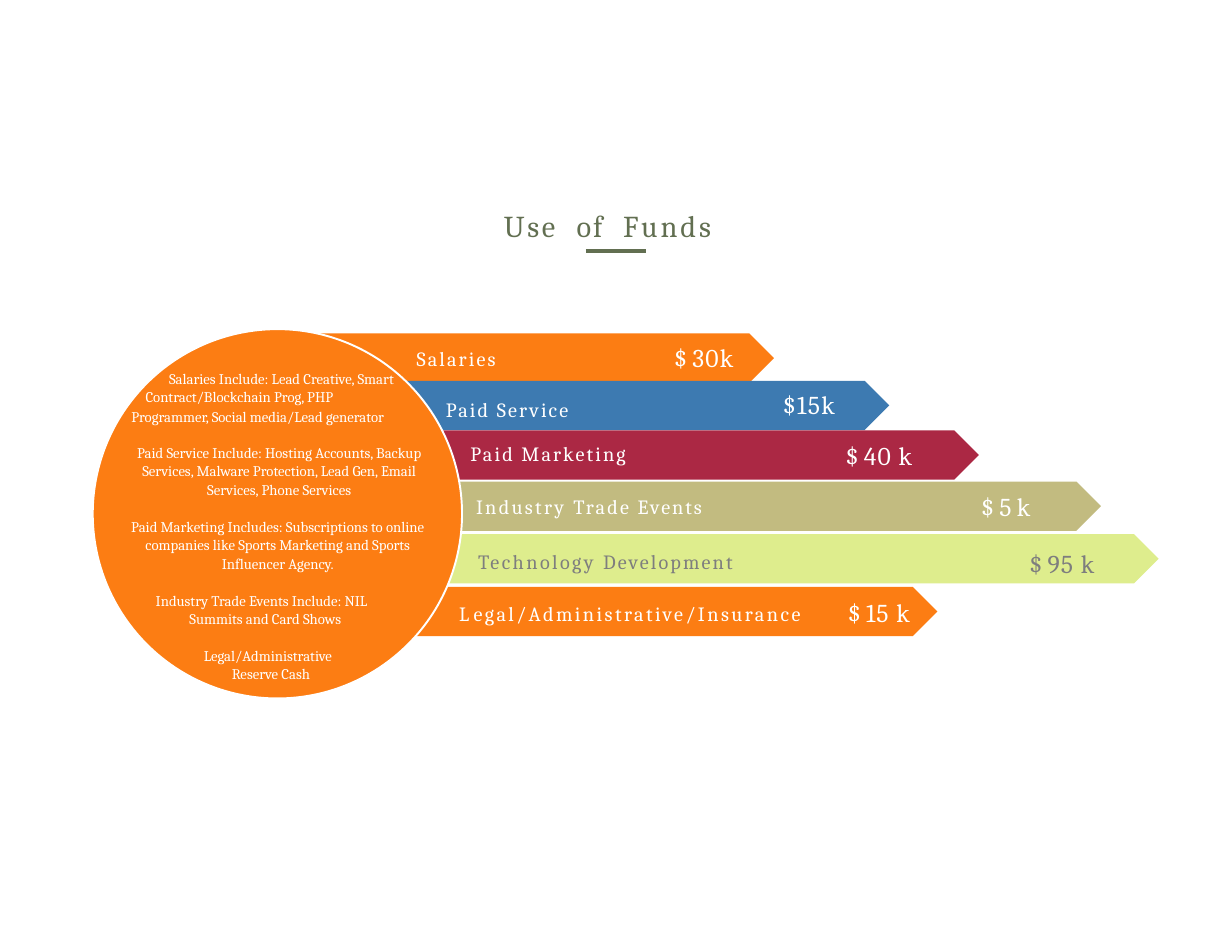
"""Build the Use of Funds slide: arrow bars fanning out from a circle of notes."""
from lxml.etree import SubElement
from pptx import Presentation
from pptx.dml.color import RGBColor
from pptx.enum.shapes import MSO_CONNECTOR, MSO_SHAPE
from pptx.enum.text import PP_ALIGN
from pptx.oxml.ns import qn
from pptx.util import Pt

HUES = {"orange": "FC7D13", "blue": "3D7AB1", "red": "AB2844", "sand": "C2BB80",
        "lime": "DEED8D", "white": "FFFFFF", "gray": "7E7E7E", "olive": "626F51"}


def hue(name):
    return RGBColor.from_string(HUES[name])


def write(parts, left, top, width, height, size=13, color="white", align=PP_ALIGN.LEFT,
          margin=0, indent=0, lines=1.0):
    box = slide.shapes.add_textbox(Pt(left), Pt(top), Pt(width), Pt(height))
    frame = box.text_frame
    frame.word_wrap = True
    frame.margin_left = frame.margin_right = frame.margin_top = frame.margin_bottom = 0
    para = frame.paragraphs[0]
    para.alignment = align
    para.line_spacing = lines
    props = para._p.get_or_add_pPr()
    props.set("marL", str(Pt(margin)))
    props.set("indent", str(Pt(indent)))
    for text, gap in parts:
        run = para.add_run()
        run.text = text
        run.font.name = "Cambria"
        run.font.size = Pt(size)
        run.font.color.rgb = hue(color)
        run._r.get_or_add_rPr().set("spc", str(round(gap * 100)))


deck = Presentation()
deck.slide_width, deck.slide_height = Pt(792), Pt(612)
slide = deck.slides.add_slide(deck.slide_layouts[6])

write([("Use", 1.7), (" ", 7.5), ("of", 1.3), (" ", 7.5), ("Funds", 1.9)],
      324, 133, 200, 24, size=19.5, color="olive")
rule = slide.shapes.add_connector(MSO_CONNECTOR.STRAIGHT, Pt(376.6), Pt(161.3), Pt(415.4), Pt(161.3))
rule.line.color.rgb = hue("olive")
rule.line.width = Pt(2.47)
SubElement(rule._element.spPr, qn("a:effectLst"))

bars = [
    ("orange", 259.9, 377.3, 342.7), ("orange", 165.6, 214.4, 331.9),
    ("blue", 165.6, 244.8, 406.1), ("red", 168.5, 276.7, 460.8),
    ("sand", 196.6, 309.6, 511.2), ("lime", 177.8, 343.4, 567),
]
for fill, left, top, width in bars:
    bar = slide.shapes.add_shape(MSO_SHAPE.PENTAGON, Pt(left), Pt(top), Pt(width), Pt(31.7))
    bar.shadow.inherit = False
    bar.fill.solid()
    bar.fill.fore_color.rgb = hue(fill)
    bar.line.fill.background()

disc = slide.shapes.add_shape(MSO_SHAPE.OVAL, Pt(59.6), Pt(211.6), Pt(237.4), Pt(237.4))
disc.shadow.inherit = False
disc.fill.solid()
disc.fill.fore_color.rgb = hue("orange")
disc.line.color.rgb = hue("white")
disc.line.width = Pt(1.25)

labels = [
    ([("Salaries", 1.4)], 267.8, 222.9, "white"),
    ([("Paid Service", 1.4)], 286.6, 255.3, "white"),
    ([("Paid Marketing", 1.4)], 302.4, 283.4, "white"),
    ([("Industry ", 1.5), ("Trade ", 1.4), ("Events", 1.3)], 306, 318, "white"),
    ([("Technology ", 1.6), ("Development", 1.4)], 307.4, 353.2, "gray"),
    ([("L", 2.8), ("egal/Administrative/Insurance", 1.6)], 295.2, 386.4, "white"),
]
for parts, left, top, color in labels:
    write(parts, left, top, 242, 16, color=color)

sums = [
    ([("$ ", -0.2), ("30k", 0.8)], 433.4, 219.9, "white"),
    ([("$15k", 0.9)], 503.3, 250.1, "white"),
    ([("$ ", -0.2), ("40 ", 0.7), ("k", -0.5)], 543.6, 282.9, "white"),
    ([("$ ", -0.2), ("5 ", -0.1), ("k", -0.5)], 630.7, 315.6, "white"),
    ([("$ ", -0.2), ("95 ", 0.7), ("k", -0.5)], 661.7, 352.3, "gray"),
    ([("$ ", -0.2), ("15 ", 0.7), ("k", -0.5)], 545, 384, "white"),
]
for parts, left, top, color in sums:
    write(parts, left, top, 54, 20, size=16.5, color=color)

mid = PP_ALIGN.CENTER
notes = [
    ("Salaries Include: Lead Creative, Smart Contract/Blockchain Prog, PHP",
     93.6, 237.1, 172, 24, {"indent": 15.1}),
    ("Programmer, Social media/Lead generator", 84.4, 261.5, 190, 12, {}),
    ("Paid Service Include: Hosting Accounts, Backup Services, Malware Protection, "
     "Lead Gen, Email Services, Phone Services", 80.5, 284.6, 198, 36, {"align": mid}),
    ("Paid Marketing Includes: Subscriptions to online companies like Sports Marketing "
     "and Sports Influencer Agency.", 81.4, 332.2, 194.4, 36, {"align": mid}),
    ("Industry Trade Events Include: NIL Summits and Card Shows",
     99.4, 379.7, 157.7, 24, {"margin": 22.3, "indent": -21.6}),
    ("Legal/Administrative Reserve Cash",
     130.3, 415, 95.8, 24, {"margin": 18.7, "indent": -18}),
]
for text, left, top, width, height, form in notes:
    write([(text, 0)], left, top, width, height, size=9.5, lines=1.04, **form)

deck.save("out.pptx")
